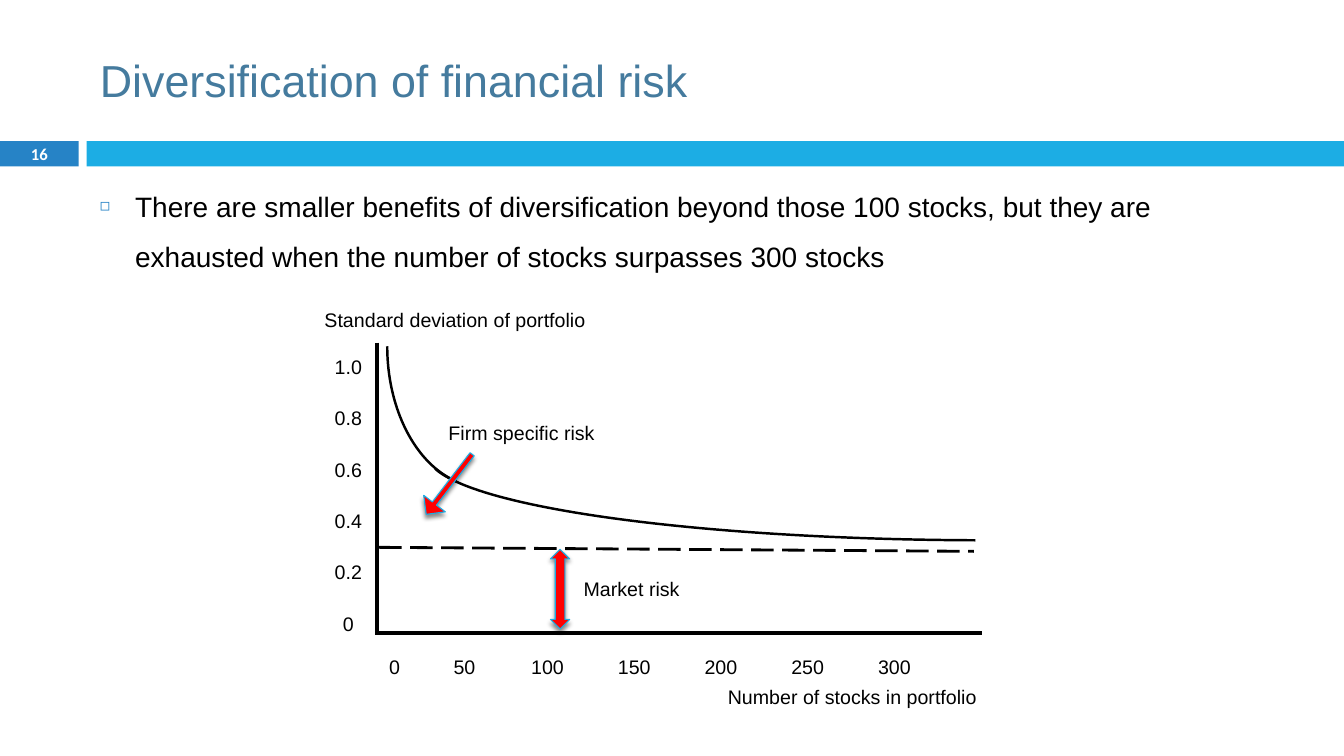
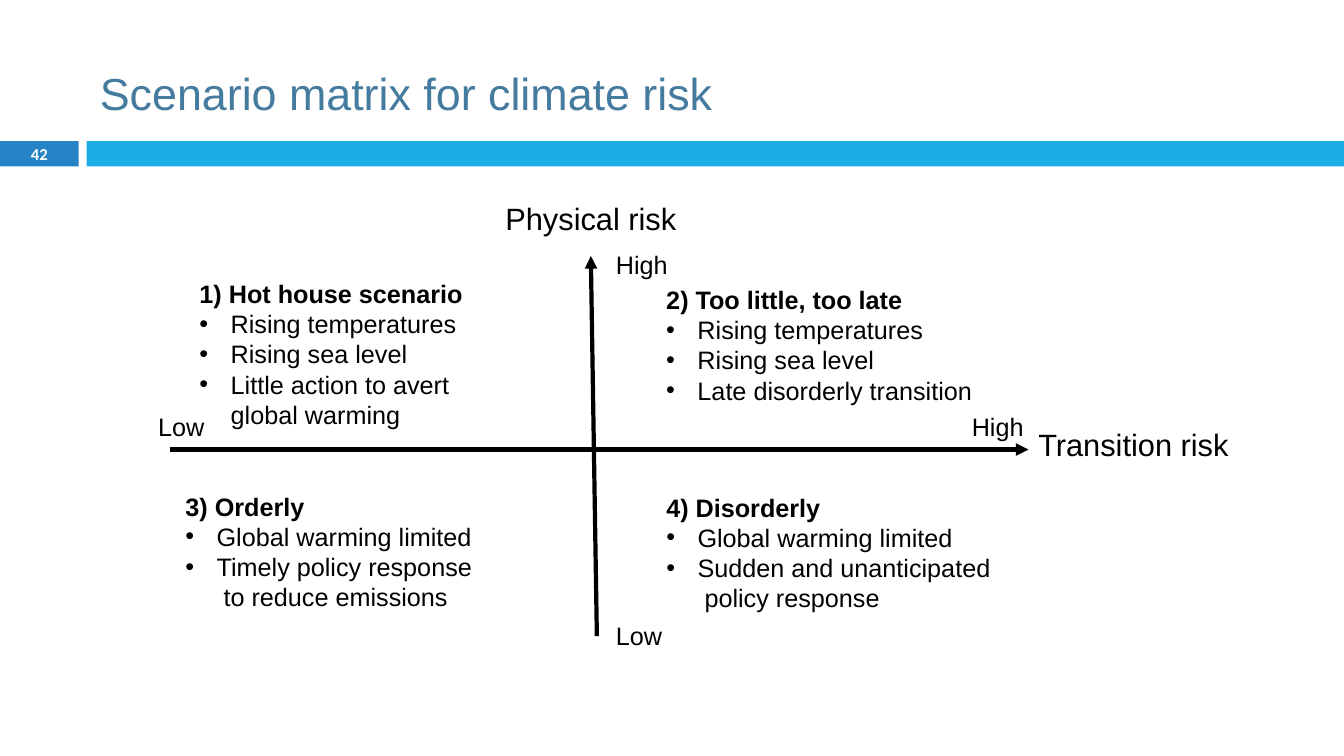
from lxml import etree
from pptx import Presentation
from pptx.dml.color import RGBColor
from pptx.enum.dml import MSO_LINE
from pptx.enum.shapes import MSO_CONNECTOR, MSO_SHAPE
from pptx.enum.text import MSO_ANCHOR, MSO_AUTO_SIZE, PP_ALIGN
from pptx.oxml.ns import qn
from pptx.util import Pt

PX = 9144
COLORS = {
    "title": "457B9E",
    "number_band": "2683C6",
    "band": "1CADE4",
    "arrow": "FF0000",
    "text": "000000",
    "white": "FFFFFF",
}
LEFT, CENTER = PP_ALIGN.LEFT, PP_ALIGN.CENTER
TOP, MIDDLE = MSO_ANCHOR.TOP, MSO_ANCHOR.MIDDLE
NO_AUTOFIT = MSO_AUTO_SIZE.NONE
STRAIGHT = MSO_CONNECTOR.STRAIGHT
LONG_DASH = MSO_LINE.LONG_DASH
RECTANGLE, ARC = MSO_SHAPE.RECTANGLE, MSO_SHAPE.ARC
DOWN_ARROW, UP_DOWN_ARROW = MSO_SHAPE.DOWN_ARROW, MSO_SHAPE.UP_DOWN_ARROW
TITLE_AND_CONTENT, TITLE_ONLY = 1, 5


def color(name):
    return RGBColor.from_string(COLORS[name])


def add_xml(parent, tag, **attributes):
    child = etree.SubElement(parent, qn(tag))
    for name, value in attributes.items():
        child.set(name, str(value))
    return child


class Deck:
    def __init__(self):
        self.presentation = Presentation()
        self.presentation.slide_width = 1333 * PX
        self.presentation.slide_height = 750 * PX
        self.slide = None

    def add_slide(self, layout, title, number, title_spacing=1.0):
        layouts = self.presentation.slide_layouts
        self.slide = self.presentation.slides.add_slide(layouts[layout])
        shape = self.slide.shapes.title
        self.place(shape, 89, 25, 1189, 108)
        paragraph = self.frame(shape, MIDDLE).paragraphs[0]
        self.format_text(paragraph, title, 32, "title", spacing=title_spacing)
        self.shape(RECTANGLE, 0, 140, 78, 25, fill="number_band")
        self.shape(RECTANGLE, 86, 140, 1247, 25, fill="band")
        self.text([str(number)], 0, 139, 78, 27, 11.9, ink="white", font="Calibri",
                  bold=True, align=CENTER, anchor=MIDDLE)

    def place(self, shape, left, top, width, height):
        shape.left, shape.top = left * PX, top * PX
        shape.width, shape.height = width * PX, height * PX

    def frame(self, shape, anchor, wrap=True):
        frame = shape.text_frame
        frame.word_wrap = wrap
        frame.auto_size = NO_AUTOFIT
        frame.vertical_anchor = anchor
        return frame

    def format_text(self, paragraph, text, size, ink="text", font="Arial", bold=False,
                    align=LEFT, spacing=1.0, before=0):
        paragraph.text = text
        paragraph.alignment = align
        paragraph.line_spacing = spacing
        paragraph.space_before = Pt(before)
        paragraph.font.name = font
        paragraph.font.size = Pt(size)
        paragraph.font.bold = bold
        paragraph.font.color.rgb = color(ink)

    def bullet(self, paragraph, character, indent, ink="text", percent=100):
        properties = paragraph._p.get_or_add_pPr()
        properties.set("marL", str(indent * PX))
        properties.set("indent", str(-indent * PX))
        default_font = properties.find(qn("a:defRPr"))
        marks = [
            add_xml(properties, "a:buClr"),
            add_xml(properties, "a:buSzPct", val=percent * 1000),
            add_xml(properties, "a:buFont", typeface="Arial"),
            add_xml(properties, "a:buChar", char=character),
        ]
        add_xml(marks[0], "a:srgbClr", val=COLORS[ink])
        for mark in marks:
            default_font.addprevious(mark)

    def tabs(self, paragraph, positions):
        properties = paragraph._p.get_or_add_pPr()
        tab_list = add_xml(properties, "a:tabLst")
        for position in positions:
            add_xml(tab_list, "a:tab", pos=position * PX, algn="l")
        properties.find(qn("a:defRPr")).addprevious(tab_list)

    def body(self, text, left, top, width, height):
        shape = self.slide.placeholders[1]
        self.place(shape, left, top, width, height)
        paragraph = self.frame(shape, TOP).paragraphs[0]
        self.format_text(paragraph, text, 20, spacing=1.5, before=7)
        self.bullet(paragraph, "◻", 35, "number_band", 60)

    def text(self, lines, left, top, width, height, size, anchor=TOP, wrap=True, **style):
        shape = self.slide.shapes.add_textbox(left * PX, top * PX, width * PX, height * PX)
        frame = self.frame(shape, anchor, wrap)
        for index, line in enumerate(lines):
            paragraph = frame.add_paragraph() if index else frame.paragraphs[0]
            self.format_text(paragraph, line, size, **style)
        return frame.paragraphs

    def scenario(self, heading, points, left, top, width):
        paragraphs = self.text([heading, *points], left, top, width, 162, 18)
        paragraphs[0].font.bold = True
        for paragraph in paragraphs[1:]:
            self.bullet(paragraph, "•", 31)

    def shape(self, kind, left, top, width, height, fill=None, line=None,
              weight=1.0, rotation=0, adjustments=()):
        shape = self.slide.shapes.add_shape(
            kind, left * PX, top * PX, width * PX, height * PX)
        shape.shadow.inherit = False
        shape.rotation = rotation
        for index, value in enumerate(adjustments):
            shape.adjustments[index] = value
        if fill:
            shape.fill.solid()
            shape.fill.fore_color.rgb = color(fill)
        else:
            shape.fill.background()
        if line:
            shape.line.color.rgb = color(line)
            shape.line.width = Pt(weight)
        else:
            shape.line.fill.background()
        return shape

    def curve(self, left, top, width, height, adjustments):
        self.shape(ARC, left, top, width, height, line="text", weight=1.75,
                   rotation=180, adjustments=adjustments)

    def block_arrow(self, kind, left, top, width, height, **options):
        shape = self.shape(kind, left, top, width, height, fill="arrow", line="band",
                           weight=0.79, **options)
        effects = shape.element.spPr.find(qn("a:effectLst"))
        shadow = add_xml(effects, "a:outerShdw", blurRad=Pt(3), dist=Pt(2.4),
                         dir=5400000, rotWithShape=0)
        ink = add_xml(shadow, "a:srgbClr", val=COLORS["text"])
        add_xml(ink, "a:alpha", val=45000)

    def line(self, start, end, weight, dash=None, arrow=False):
        x1, y1, x2, y2 = (value * PX for value in (*start, *end))
        connector = self.slide.shapes.add_connector(STRAIGHT, x1, y1, x2, y2)
        connector.line.color.rgb = color("text")
        connector.line.width = Pt(weight)
        if dash is not None:
            connector.line.dash_style = dash
        properties = connector.element.spPr
        if arrow:
            add_xml(properties.find(qn("a:ln")), "a:tailEnd", type="triangle")
        add_xml(properties, "a:effectLst")


def add_diversification(deck):
    deck.add_slide(TITLE_AND_CONTENT, "Diversification of financial risk", 16)
    deck.body("There are smaller benefits of diversification beyond those 100 stocks, "
              "but they are exhausted when the number of stocks surpasses 300 stocks",
              89, 166, 1136, 539)
    deck.curve(384, 204, 190, 279, (168.71, 0))
    deck.curve(424, 366, 1113, 170, (167.28, 215.13))
    deck.line((374, 340), (374, 628), 2.5)
    deck.line((372, 628), (974, 628), 2.5)
    deck.text(["1.0", "0.8", "0.6", "0.4", "0.2", "0"], 322, 324, 47, 307, 14,
              wrap=False, align=CENTER, spacing=2.0, before=3)
    deck.line((376, 543), (966, 547), 2, dash=LONG_DASH)
    deck.block_arrow(UP_DOWN_ARROW, 546, 545, 19, 79)
    deck.block_arrow(DOWN_ARROW, 432, 443, 27, 75, rotation=37.4, adjustments=(0.19, 0.5))
    for label, left, top, width in (
        ("Standard deviation of portfolio", 312, 301, 280),
        ("Number of stocks in portfolio", 712, 675, 268),
        ("Market risk", 569, 567, 116),
        ("Firm specific risk", 435, 413, 166),
    ):
        deck.text([label], left, top, width, 34, 14, wrap=False)
    stock_counts = "\t".join(str(count) for count in range(0, 301, 50))
    axis = deck.text([stock_counts], 376, 633, 659, 41, 14, spacing=1.5)
    deck.tabs(axis[0], [64, *range(141, 500, 86)])


def add_scenarios(deck):
    deck.add_slide(TITLE_ONLY, "Scenario matrix for climate risk", 42, title_spacing=1.5)
    deck.line((592, 631), (586, 254), 3, arrow=True)
    deck.line((169, 446), (1020, 446), 3, arrow=True)
    deck.text(["Physical risk"], 475, 193, 222, 47, 22, align=CENTER)
    deck.text(["Transition risk"], 1020, 417, 274, 47, 22, anchor=MIDDLE)
    for label, left, top in (
        ("High", 954, 403), ("High", 601, 242), ("Low", 147, 403), ("Low", 601, 610),
    ):
        deck.text([label], left, top, 88, 40, 18, anchor=MIDDLE)
    rising = ["Rising temperatures", "Rising sea level"]
    limited = "Global warming limited"
    for heading, points, left, top, width in (
        ("1) Hot house scenario", [*rising, "Little action to avert\nglobal warming"],
         188, 271, 338),
        ("2) Too little, too late", [*rising, "Late disorderly transition"], 651, 277, 403),
        ("3) Orderly", [limited, "Timely policy response\n to reduce emissions"],
         174, 482, 381),
        ("4) Disorderly", [limited, "Sudden and unanticipated\n policy response"],
         651, 483, 421),
    ):
        deck.scenario(heading, points, left, top, width)


def main():
    deck = Deck()
    add_diversification(deck)
    add_scenarios(deck)
    deck.presentation.save("out.pptx")


if __name__ == "__main__":
    main()
